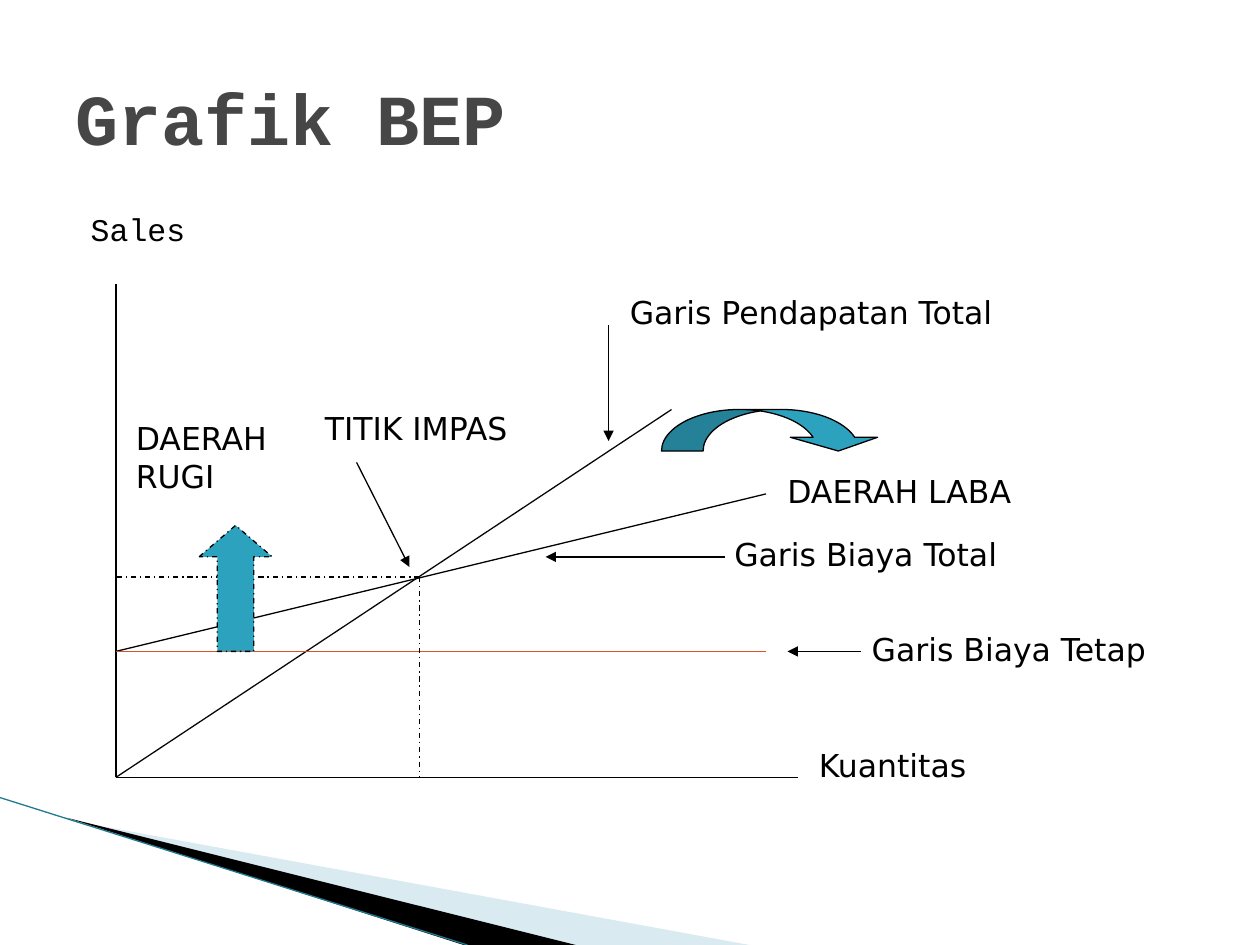
from lxml.etree import SubElement
from pptx import Presentation
from pptx.dml.color import RGBColor
from pptx.enum.dml import MSO_LINE_DASH_STYLE as DASH
from pptx.enum.shapes import MSO_CONNECTOR, MSO_SHAPE as SHAPE
from pptx.enum.text import MSO_ANCHOR, PP_ALIGN
from pptx.oxml.ns import qn
from pptx.util import Pt

PX = 9144  # 100 px to the inch
SANS, MONO = "DejaVu Sans", "Courier New"


def color(hex_value):
    return RGBColor.from_string(hex_value)


def set_font(paragraph, name, size, hex_value):
    paragraph.font.name = name
    paragraph.font.size = Pt(size)
    paragraph.font.color.rgb = color(hex_value)


prs = Presentation()
prs.slide_width, prs.slide_height = 1000 * PX, 750 * PX
slide = prs.slides.add_slide(prs.slide_layouts[1])
shapes = slide.shapes
title, sales = slide.placeholders

# Corner decoration
for fill, points in [
    ("D9EAF1", [(55, 651), (595, 750), (456, 750)]),
    ("000000", [(53, 649), (457, 750), (368, 750)]),
]:
    builder = shapes.build_freeform(*points[0], scale=PX)
    builder.add_line_segments(points[1:], close=True)
    wedge = builder.convert_to_shape()
    wedge.shadow.inherit = False
    wedge.fill.solid()
    wedge.fill.fore_color.rgb = color(fill)
    wedge.line.fill.background()

# Title
title.left, title.top, title.width, title.height = (v * PX for v in (50, 30, 900, 125))
title.text_frame.text = "Grafik BEP"
title.text_frame.vertical_anchor = MSO_ANCHOR.MIDDLE
heading = title.text_frame.paragraphs[0]
heading.alignment = PP_ALIGN.LEFT
heading.font.bold = True
set_font(heading, MONO, 41, "464646")

# Vertical axis label
sales.left, sales.top, sales.width, sales.height = (v * PX for v in (50, 162, 900, 495))
sales.text_frame.text = "Sales"
axis_label = sales.text_frame.paragraphs[0]
props = axis_label._p.get_or_add_pPr()
props.set("marL", str(40 * PX))
props.set("indent", str(-28 * PX))
axis_label.space_before = Pt(0)
SubElement(props, qn("a:buNone"))
set_font(axis_label, MONO, 18, "000000")

# Chart geometry
left, base, fixed_cost = 92, 617, 517
even_x, even_y = 333, 458
BLACK = "000000"

# Lines: start, end, colour, dashed, arrowhead
for x1, y1, x2, y2, stroke, dashed, arrow in [
    (0, 633, 371, 750, "1F7A90", False, False),  # corner edge
    (left, 225, left, base, BLACK, False, False),  # sales axis
    (left, base, 633, base, BLACK, False, False),  # quantity axis
    (left, base, 533, 325, "080808", False, False),  # total revenue
    (left, fixed_cost, 608, 392, BLACK, False, False),  # total cost
    (left, fixed_cost, 608, fixed_cost, "D5532B", False, False),  # fixed cost
    (even_x, even_y, even_x, base, BLACK, True, False),
    (even_x, even_y, left, even_y, BLACK, True, False),
    (283, 367, 325, 450, BLACK, False, True),  # to break-even point
    (483, 258, 483, 350, BLACK, False, True),  # to total revenue
    (575, 442, 433, 442, BLACK, False, True),  # to total cost
    (683, fixed_cost, 625, fixed_cost, BLACK, False, True),  # to fixed cost
]:
    line = shapes.add_connector(
        MSO_CONNECTOR.STRAIGHT, x1 * PX, y1 * PX, x2 * PX, y2 * PX)
    line.line.color.rgb = color(stroke)
    line.line.width = Pt(0.75)
    if dashed:
        line.line.dash_style = DASH.DASH_DOT
    if arrow:
        SubElement(line.line._get_or_add_ln(), qn("a:tailEnd"), type="triangle")
    SubElement(line._element.spPr, qn("a:effectLst"))

# Block arrows for the profit and loss areas
for kind, box, adjustments, dash in [
    (SHAPE.CURVED_DOWN_ARROW, (525, 325, 175, 33), (1.05, 2.1, 0.33), DASH.SOLID),
    (SHAPE.UP_ARROW, (158, 417, 58, 100), (0.5, 0.43), DASH.DASH_DOT),
]:
    area = shapes.add_shape(kind, *(v * PX for v in box))
    for i, value in enumerate(adjustments):
        area.adjustments[i] = value
    area.shadow.inherit = False
    area.fill.solid()
    area.fill.fore_color.rgb = color("2DA2BF")
    area.line.color.rgb = color(BLACK)
    area.line.width = Pt(0.75)
    area.line.dash_style = dash

# Labels
for text, x, y, width, height in [
    ("TITIK IMPAS", 248, 320, 179, 40),
    ("Garis Pendapatan Total", 490, 228, 313, 40),
    ("Garis Biaya Total", 573, 420, 234, 40),
    ("Garis Biaya Tetap", 682, 495, 242, 40),
    ("DAERAH LABA", 615, 370, 199, 40),
    ("DAERAH\nRUGI", 98, 328, 134, 70),
    ("Kuantitas", 640, 587, 139, 40),
]:
    label = shapes.add_textbox(x * PX, y * PX, width * PX, height * PX).text_frame
    label.word_wrap = False
    label.text = text
    for paragraph in label.paragraphs:
        set_font(paragraph, SANS, 18, BLACK)

prs.save("out.pptx")
